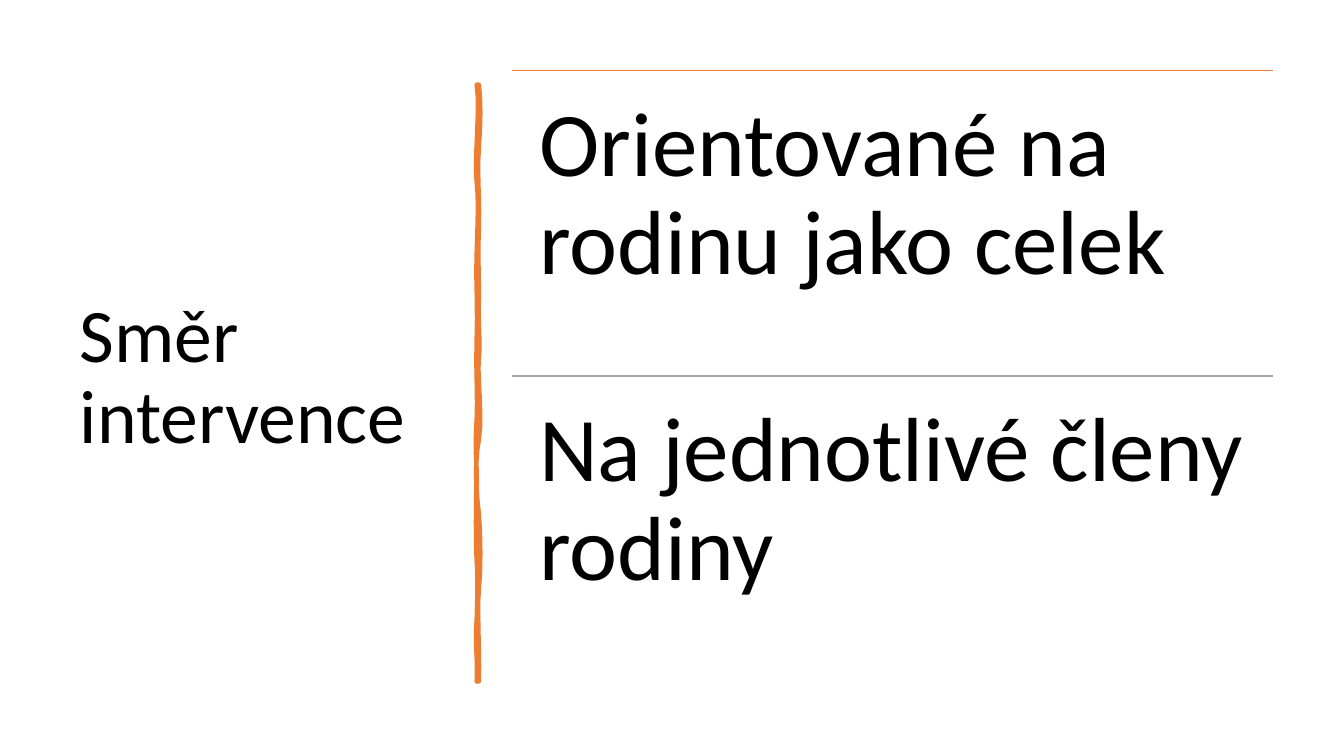
from pptx import Presentation
from pptx.dml.color import RGBColor
from pptx.enum import shapes, text
from pptx.oxml import parse_xml
from pptx.oxml.ns import nsdecls
from pptx.util import Pt

WHITE = RGBColor(0xFF, 0xFF, 0xFF)
BLACK = RGBColor(0x00, 0x00, 0x00)
ORANGE = RGBColor(0xED, 0x7D, 0x31)
GREY = RGBColor(0xA5, 0xA5, 0xA5)
FONT = "Calibri"
UNIT = 0.72
CURVE_STEPS = 6

BRUSH_START = (2, 0)
BRUSH_CURVES = [
    ((4, 18), (4, 35), (2, 62)),
    ((0, 89), (3, 111), (2, 142)),
    ((1, 173), (2, 178), (2, 210)),
    ((1, 241), (4, 258), (2, 272)),
    ((0, 286), (6, 330), (2, 352)),
    ((-2, 373), (-1, 400), (2, 426)),
    ((4, 452), (4, 480), (2, 500)),
    ((0, 519), (3, 566), (2, 592)),
    ((1, 592), (0, 592), (0, 592)),
    ((1, 562), (-2, 560), (0, 529)),
    ((1, 499), (1, 486), (0, 473)),
    ((-1, 460), (-1, 411), (0, 393)),
    ((0, 375), (-2, 361), (0, 331)),
    ((1, 302), (-1, 289), (0, 251)),
    ((1, 214), (-1, 197), (0, 166)),
    ((1, 134), (2, 116), (0, 97)),
    ((-3, 79), (4, 20), (0, 0)),
]


def add_text(s, box, words, size, inset, anchor):
    sp = s.shapes.add_textbox(*map(Pt, box))
    tf = sp.text_frame
    tf.word_wrap = True
    tf.vertical_anchor = anchor
    tf.margin_left = tf.margin_right = Pt(inset[0])
    tf.margin_top = tf.margin_bottom = Pt(inset[1])
    p = tf.paragraphs[0]
    p.line_spacing = 0.9
    r = p.add_run()
    r.text = words
    r.font.name = FONT
    r.font.size = Pt(size)
    r.font.color.rgb = BLACK


def add_rule(s, left, top, width, color):
    cx = s.shapes.add_connector(
        shapes.MSO_CONNECTOR.STRAIGHT, Pt(left), Pt(top), Pt(left + width), Pt(top))
    cx.line.color.rgb = color
    cx.line.width = Pt(1)
    cx._element.spPr.append(parse_xml(f"<a:effectLst {nsdecls('a')}/>"))


def curve_points(start, curves):
    for c1, c2, end in curves:
        for i in range(1, CURVE_STEPS + 1):
            t = i / CURVE_STEPS
            q = 1 - t
            yield tuple(
                q**3 * a + 3 * q * q * t * b + 3 * q * t * t * c + t**3 * d
                for a, b, c, d in zip(start, c1, c2, end))
        start = end


def add_brush(s, left, top):
    def place(point):
        return Pt(left + point[0] * UNIT), Pt(top + point[1] * UNIT)

    fb = s.shapes.build_freeform(*place(BRUSH_START))
    fb.add_line_segments(
        [place(pt) for pt in curve_points(BRUSH_START, BRUSH_CURVES)], close=True)
    sp = fb.convert_to_shape()
    sp.shadow.inherit = False
    sp.fill.solid()
    sp.fill.fore_color.rgb = ORANGE
    sp.line.color.rgb = ORANGE
    sp.line.width = Pt(3.25)


def add_items(s, box, items):
    left, top, width, height = box
    row = height / len(items)
    for i, (words, color) in enumerate(items):
        y = top + i * row
        add_rule(s, left, y, width, color)
        add_text(s, (left, y, width, row), words, 65, (19.44, 19.44),
                 text.MSO_ANCHOR.TOP)


def main():
    prs = Presentation()
    prs.slide_width, prs.slide_height = Pt(960), Pt(540)
    s = prs.slides.add_slide(prs.slide_layouts[6])
    s.background.fill.solid()
    s.background.fill.fore_color.rgb = WHITE
    add_text(s, (50, 50.4, 269, 440), "Směr intervence", 54, (7.2, 3.6),
             text.MSO_ANCHOR.MIDDLE)
    add_brush(s, 340.56, 60.48)
    add_items(s, (365.76, 50.4, 543.6, 436.32), [
        ("Orientované na rodinu jako celek", ORANGE),
        ("Na jednotlivé členy rodiny", GREY),
    ])
    prs.save("out.pptx")


if __name__ == "__main__":
    main()
